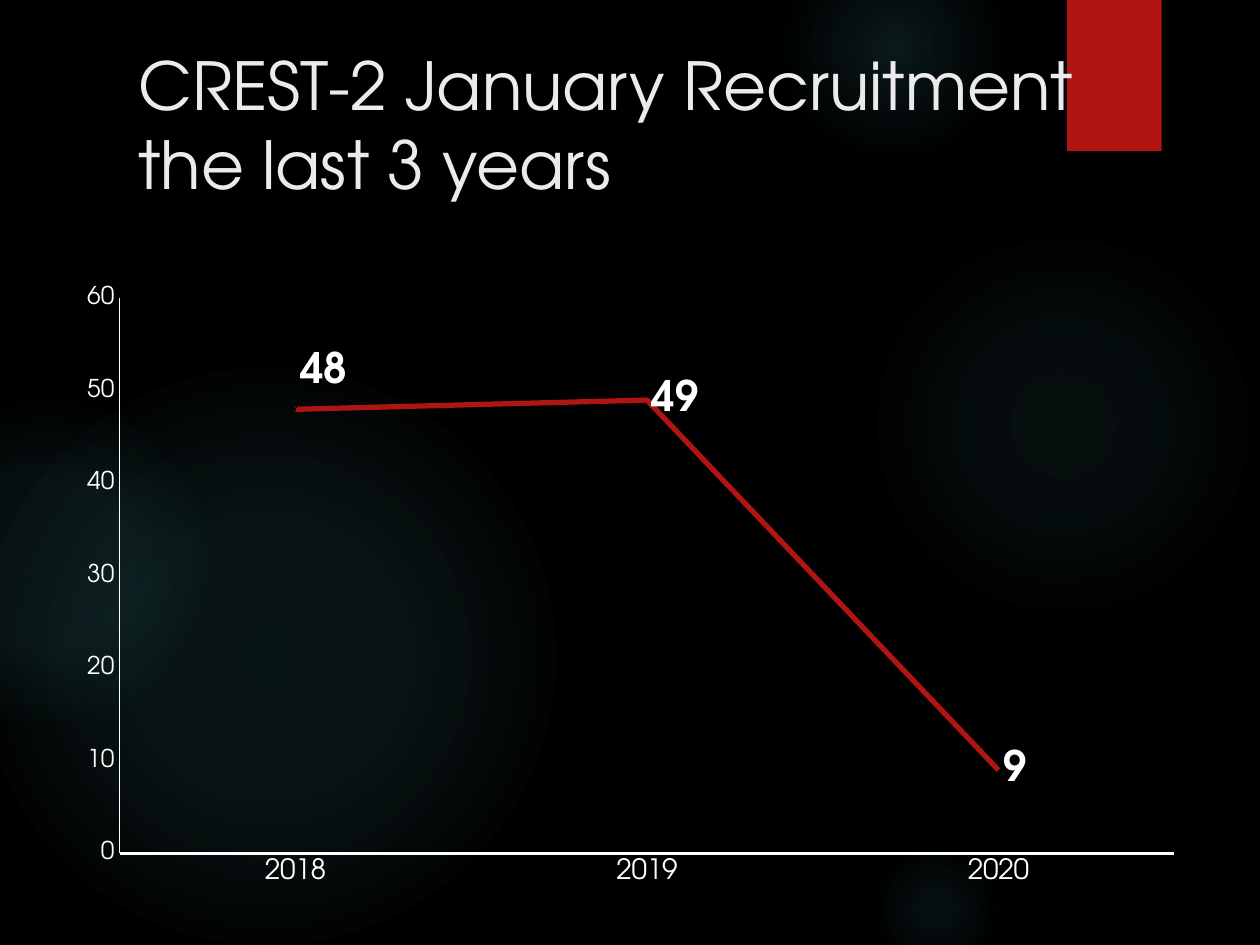
from dataclasses import dataclass

from lxml import etree
from pptx import Presentation
from pptx.chart.data import CategoryChartData
from pptx.dml.color import RGBColor
from pptx.enum.chart import XL_CHART_TYPE, XL_LABEL_POSITION, XL_MARKER_STYLE, XL_TICK_MARK
from pptx.enum.shapes import MSO_SHAPE
from pptx.enum.text import MSO_ANCHOR, PP_ALIGN
from pptx.oxml import parse_xml
from pptx.oxml.ns import nsdecls, qn
from pptx.util import Inches, Pt

LINE_CHART = XL_CHART_TYPE.LINE
LABEL_RIGHT = XL_LABEL_POSITION.RIGHT
NO_MARKER = XL_MARKER_STYLE.NONE
NO_TICK = XL_TICK_MARK.NONE
ELLIPSE, RECTANGLE = MSO_SHAPE.OVAL, MSO_SHAPE.RECTANGLE
TOP, LEFT = MSO_ANCHOR.TOP, PP_ALIGN.LEFT


@dataclass(frozen=True)
class Theme:
    font: str = "TeX Gyre Adventor"
    background: str = "000000"
    glow: str = "50B9C1"
    accent: str = "B01513"
    title: str = "EBEBEB"
    chart_text: str = "FFFFFF"
    title_size: float = 37.8
    category_size: float = 16
    value_size: float = 14
    label_size: float = 24


@dataclass(frozen=True)
class Glow:
    """A round light: alphas in percent at the centre and at 36 % of the way out."""
    left: float
    top: float
    diameter: float
    centre_alpha: int
    middle_alpha: int
    fade_end: int


THEME = Theme()
GLOWS = [
    Glow(6.89, 1.83, 3.08, 7, 6, 69),
    Glow(6.22, -0.5, 1.75, 14, 7, 73),
    Glow(6.89, 6.67, 1.08, 9, 5, 66),
    Glow(-0.17, 2.92, 4.58, 11, 10, 75),
    Glow(-0.92, 3.17, 2.58, 8, 8, 72),
]
RECRUITMENT = {"2018": 48, "2019": 49, "2020": 9}


def color(value: str) -> RGBColor:
    return RGBColor.from_string(value)


def style_font(font, size: float, value: str, bold: bool = False) -> None:
    font.name = THEME.font
    font.size = Pt(size)
    font.bold = bold
    font.color.rgb = color(value)


def add_glow(page, glow: Glow) -> None:
    size = Inches(glow.diameter)
    shape = page.shapes.add_shape(ELLIPSE, Inches(glow.left), Inches(glow.top), size, size)
    shape.shadow.inherit = False
    shape.line.fill.background()
    stops = [(0, glow.centre_alpha), (36, glow.middle_alpha), (glow.fade_end, 0)]
    stop_xml = "".join(
        f'<a:gs pos="{position * 1000}"><a:srgbClr val="{THEME.glow}">'
        f'<a:alpha val="{alpha * 1000}"/></a:srgbClr></a:gs>'
        for position, alpha in stops
    )
    gradient = parse_xml(
        f'<a:gradFill {nsdecls("a")} rotWithShape="1"><a:gsLst>{stop_xml}</a:gsLst>'
        '<a:path path="circle"><a:fillToRect l="50000" t="50000" r="50000" b="50000"/>'
        "</a:path></a:gradFill>"
    )
    shape._element.spPr.find(qn("a:prstGeom")).addnext(gradient)


def add_ribbon(page) -> None:
    ribbon = page.shapes.add_shape(RECTANGLE, Inches(8.47), 0, Inches(0.75), Inches(1.2))
    ribbon.shadow.inherit = False
    ribbon.fill.solid()
    ribbon.fill.fore_color.rgb = color(THEME.accent)
    ribbon.line.fill.background()


def add_title(page, text: str) -> None:
    box = page.shapes.add_textbox(Inches(1), Inches(0.3), Inches(8.5), Inches(1.25))
    frame = box.text_frame
    frame.word_wrap = True
    frame.vertical_anchor = TOP
    frame.text = text
    para = frame.paragraphs[0]
    para.alignment = LEFT
    style_font(para.runs[0].font, THEME.title_size, THEME.title)


def manual_layout(**settings):
    layout = parse_xml(f'<c:layout {nsdecls("c")}><c:manualLayout/></c:layout>')
    for name, value in settings.items():
        etree.SubElement(layout[0], qn(f"c:{name}")).set("val", str(value))
    return layout


def style_axis(axis, size: float, line_width: float) -> None:
    axis.has_major_gridlines = False
    axis.major_tick_mark = axis.minor_tick_mark = NO_TICK
    axis.format.line.color.rgb = color(THEME.chart_text)
    axis.format.line.width = Pt(line_width)
    style_font(axis.tick_labels.font, size, THEME.chart_text)


def style_label(label) -> None:
    style_font(label.font, THEME.label_size, THEME.chart_text, bold=True)
    label.position = LABEL_RIGHT


def add_recruitment_chart(page) -> None:
    data = CategoryChartData()
    data.categories = list(RECRUITMENT)
    data.add_series("Series 1", list(RECRUITMENT.values()))
    chart = page.shapes.add_chart(
        LINE_CHART, Inches(0.5), Inches(2.17), Inches(9), Inches(4.95), data
    ).chart
    chart.has_legend = chart.has_title = False
    style_font(chart.font, 10, THEME.chart_text)

    # Axes and plot area
    style_axis(chart.category_axis, THEME.category_size, 1.5)
    style_axis(chart.value_axis, THEME.value_size, 0.75)
    chart.value_axis.minimum_scale = 0
    chart.value_axis.maximum_scale = 60
    chart.value_axis.major_unit = 10
    plot_area = chart._chartSpace.chart.plotArea
    for layout in plot_area.findall(qn("c:layout")):
        plot_area.remove(layout)
    plot_area.insert(0, manual_layout(
        layoutTarget="inner", xMode="edge", yMode="edge", x=0.05, y=0.04, w=0.93, h=0.89
    ))

    # Line and its labels
    chart.plots[0].vary_by_categories = False
    series = chart.plots[0].series[0]
    series.smooth = False
    series.marker.style = NO_MARKER
    series.format.line.color.rgb = color(THEME.accent)
    series.format.line.width = Pt(3)
    series.data_labels.show_value = True
    style_label(series.data_labels)

    # The first label is lifted clear of the line
    style_label(series.points[0].data_label)
    first_label = series._element.find(f'{qn("c:dLbls")}/{qn("c:dLbl")}')
    first_label.find(qn("c:idx")).addnext(manual_layout(x=0, y=-0.06))


def main() -> None:
    deck = Presentation()
    deck.slide_width, deck.slide_height = Inches(10), Inches(7.5)
    page = deck.slides.add_slide(deck.slide_layouts[6])

    # Backdrop
    page.background.fill.solid()
    page.background.fill.fore_color.rgb = color(THEME.background)
    for glow in GLOWS:
        add_glow(page, glow)
    add_ribbon(page)

    # Content
    add_title(page, "CREST-2 January Recruitment the last 3 years")
    add_recruitment_chart(page)
    deck.save("out.pptx")


if __name__ == "__main__":
    main()
